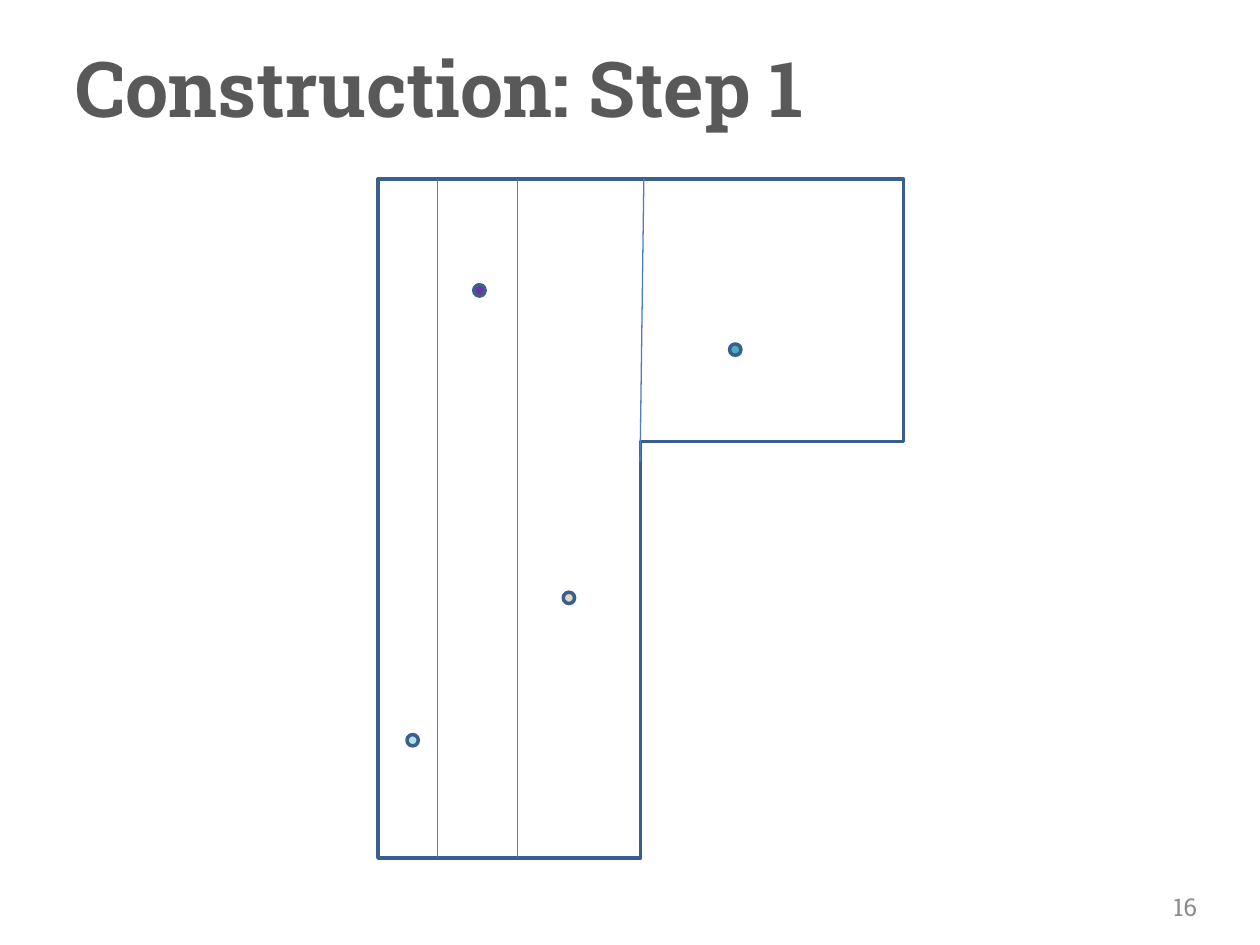
"""Build the 'Construction: Step 1' slide: an L-shaped region cut into slabs, one point in each."""
from lxml.etree import SubElement
from pptx import Presentation
from pptx.dml.color import RGBColor
from pptx.enum.shapes import MSO_CONNECTOR, MSO_SHAPE
from pptx.enum.text import MSO_ANCHOR, PP_ALIGN
from pptx.oxml.ns import qn
from pptx.util import Pt

SCALE = 9144
FONT = "Roboto Slab"
COLORS = {
    "region": "FFFFFF", "outline": "3A5F8C", "divider": "4B7EBC",
    "title": "595959", "number": "8C8C8C",
    "pale": "B7DEE8", "purple": "7030A0", "teal": "4BACC6", "sand": "DDD9C3",
}
TITLE = ("Construction: Step 1", (50, 30, 900, 78), 44, "title", PP_ALIGN.LEFT)
NUMBER = ("16", (727, 700, 233, 40), 14, "number", PP_ALIGN.RIGHT)
REGION = (300, 142, 417, 539)
DOT = 9
POINTS = [(323, 583, "pale"), (376, 226, "purple"), (579, 273, "teal"), (447, 470, "sand")]
DIVIDERS = [(347, 142, 347, 680), (411, 142, 411, 680), (511, 142, 508, 367)]


def px(*values):
    return [v * SCALE for v in values]


def rgb(name):
    return RGBColor.from_string(COLORS[name])


def write(s, text, box, size, color, align):
    s.left, s.top, s.width, s.height = px(*box)
    tf = s.text_frame
    tf.word_wrap = True
    tf.vertical_anchor = MSO_ANCHOR.MIDDLE
    p = tf.paragraphs[0]
    p.text, p.alignment = text, align
    p.font.name, p.font.size = FONT, Pt(size)
    p.font.color.rgb = rgb(color)
    return p


def add_outlined(shapes, kind, box, fill):
    s = shapes.add_shape(kind, *px(*box))
    s.shadow.inherit = False
    s.fill.solid()
    s.fill.fore_color.rgb = rgb(fill)
    s.line.color.rgb = rgb("outline")
    s.line.width = Pt(2)
    return s


def add_divider(shapes, ends):
    c = shapes.add_connector(MSO_CONNECTOR.STRAIGHT, *px(*ends))
    c.line.color.rgb = rgb("divider")
    c.line.width = Pt(0.75)
    SubElement(c._element.spPr, qn("a:effectLst"))


def main():
    prs = Presentation()
    prs.slide_width, prs.slide_height = px(1000, 750)
    slide = prs.slides.add_slide(prs.slide_layouts[5])

    diagram = slide.shapes.add_group_shape().shapes
    region = add_outlined(diagram, MSO_SHAPE.CORNER, REGION, "region")
    region._element.spPr.xfrm.set("flipV", "1")
    for x, y, fill in POINTS:
        add_outlined(diagram, MSO_SHAPE.OVAL, (x, y, DOT, DOT), fill)
    for ends in DIVIDERS:
        add_divider(diagram, ends)

    write(slide.shapes.title, *TITLE).font.bold = True
    write(slide.shapes.add_textbox(*px(*NUMBER[1])), *NUMBER)
    prs.save("out.pptx")


if __name__ == "__main__":
    main()
